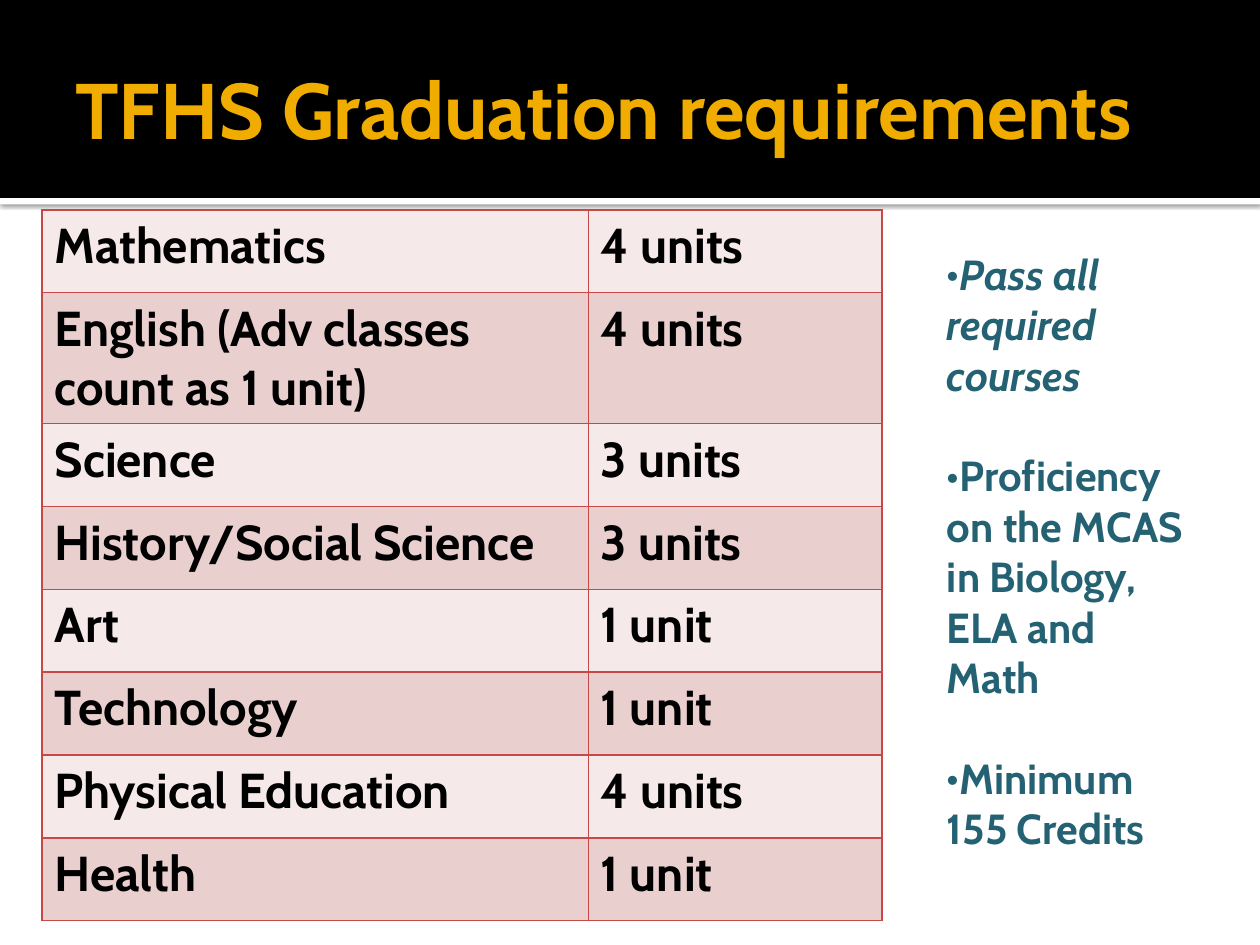
"""Build the graduation requirements slide."""
from dataclasses import dataclass

from lxml.etree import SubElement
from pptx import Presentation
from pptx.dml.color import RGBColor
from pptx.enum.shapes import MSO_SHAPE
from pptx.enum.text import MSO_ANCHOR
from pptx.oxml.ns import qn
from pptx.util import Cm, Pt

COLORS = {
    "black": "000000",
    "white": "FFFFFF",
    "gold": "F0AD00",
    "teal": "246172",
    "border": "C64847",
    "light": "F5E9E9",
    "dark": "EACFCF",
}
FONT = "Cabin"
COL_WIDTHS = (11.01, 5.92)
ROW_HEIGHT = 1.67


@dataclass
class Band:
    top: float
    height: float
    color: str
    shadow: bool = False


@dataclass
class Course:
    name: str
    units: str
    height: float = ROW_HEIGHT


@dataclass
class Rule:
    text: str
    italic: bool = False


BANDS = [Band(3.99, 0.13, "white", shadow=True), Band(0, 3.99, "black")]
COURSES = [
    Course("Mathematics", "4 units"),
    Course("English (Adv classes count as 1 unit)", "4 units", height=2.64),
    Course("Science", "3 units"),
    Course("History/Social Science", "3 units"),
    Course("Art", "1 unit"),
    Course("Technology", "1 unit"),
    Course("Physical Education", "4 units"),
    Course("Health", "1 unit"),
]
RULES = [
    Rule("Pass all required courses", italic=True),
    Rule("Proficiency on the MCAS in Biology, ELA and Math"),
    Rule("Minimum 155 Credits"),
]


def rgb(name: str) -> RGBColor:
    """Look up a named colour."""
    return RGBColor.from_string(COLORS[name])


def write(p, text: str, *, size: float, color: str, italic: bool = False,
          bullet: bool = False, before: float = 0) -> None:
    """Add bold text to a paragraph."""
    p.space_before = Pt(before)
    if bullet:
        pPr = p._p.get_or_add_pPr()
        pPr.set("marL", "0")
        pPr.set("indent", "0")
        SubElement(pPr, qn("a:buFont"), typeface=FONT)
        SubElement(pPr, qn("a:buChar"), char="•")
    r = p.add_run()
    r.text = text
    r.font.name = FONT
    r.font.size = Pt(size)
    r.font.bold = True
    r.font.italic = italic
    r.font.color.rgb = rgb(color)


def add_band(s, band: Band, width: int) -> None:
    """Draw a full-width band."""
    sp = s.shapes.add_shape(MSO_SHAPE.RECTANGLE, 0, Cm(band.top), width, Cm(band.height))
    sp.shadow.inherit = False
    sp.fill.solid()
    sp.fill.fore_color.rgb = rgb(band.color)
    sp.line.fill.background()
    if band.shadow:
        effects = sp._element.spPr.find(qn("a:effectLst"))
        shadow = SubElement(effects, qn("a:outerShdw"), blurRad=str(Pt(2.5)),
                            dist=str(Pt(0.8)), dir="5400000", algn="tl", rotWithShape="0")
        clr = SubElement(shadow, qn("a:srgbClr"), val=COLORS["black"])
        SubElement(clr, qn("a:alpha"), val="60000")


def add_text_frame(s, left: float, top: float, width: float, height: float):
    """Add a wrapping text box and return its frame."""
    tf = s.shapes.add_textbox(Cm(left), Cm(top), Cm(width), Cm(height)).text_frame
    tf.word_wrap = True
    return tf


def fill_cell(cell, text: str, fill: str) -> None:
    """Set a cell's text, borders and fill."""
    write(cell.text_frame.paragraphs[0], text, size=28, color="black")
    tcPr = cell._tc.get_or_add_tcPr()
    for side in ("lnL", "lnR", "lnT", "lnB"):
        ln = SubElement(tcPr, qn(f"a:{side}"), w=str(Pt(1)))
        SubElement(SubElement(ln, qn("a:solidFill")), qn("a:srgbClr"), val=COLORS["border"])
    cell.fill.solid()
    cell.fill.fore_color.rgb = rgb(fill)


def add_courses(s, courses: list[Course]) -> None:
    """Draw the table of required units."""
    height = sum(course.height for course in courses)
    table = s.shapes.add_table(len(courses), len(COL_WIDTHS), Cm(0.85), Cm(4.23),
                               Cm(sum(COL_WIDTHS)), Cm(height)).table
    table.first_row = False
    table.horz_banding = False
    for column, width in zip(table.columns, COL_WIDTHS):
        column.width = Cm(width)
    for i, (row, course) in enumerate(zip(table.rows, courses)):
        row.height = Cm(course.height)
        for cell, text in zip(row.cells, (course.name, course.units)):
            fill_cell(cell, text, "dark" if i % 2 else "light")


def add_rules(s, rules: list[Rule]) -> None:
    """List the other requirements."""
    tf = add_text_frame(s, 18.84, 4.88, 5.5, 13.59)
    for i, rule in enumerate(rules):
        p = tf.add_paragraph() if i else tf.paragraphs[0]
        write(p, rule.text, size=24, color="teal", italic=rule.italic,
              bullet=True, before=28.8 if i else 0)


def main() -> None:
    """Build and save the slide."""
    prs = Presentation()
    prs.slide_width, prs.slide_height = Cm(25.4), Cm(19.05)
    s = prs.slides.add_slide(prs.slide_layouts[6])
    for band in BANDS:
        add_band(s, band, prs.slide_width)
    tf = add_text_frame(s, 1.27, 0.43, 22.86, 3.48)
    tf.vertical_anchor = MSO_ANCHOR.MIDDLE
    tf.margin_right = Cm(0.13)
    write(tf.paragraphs[0], "TFHS Graduation requirements", size=45, color="gold")
    add_courses(s, COURSES)
    add_rules(s, RULES)
    prs.save("out.pptx")


if __name__ == "__main__":
    main()
